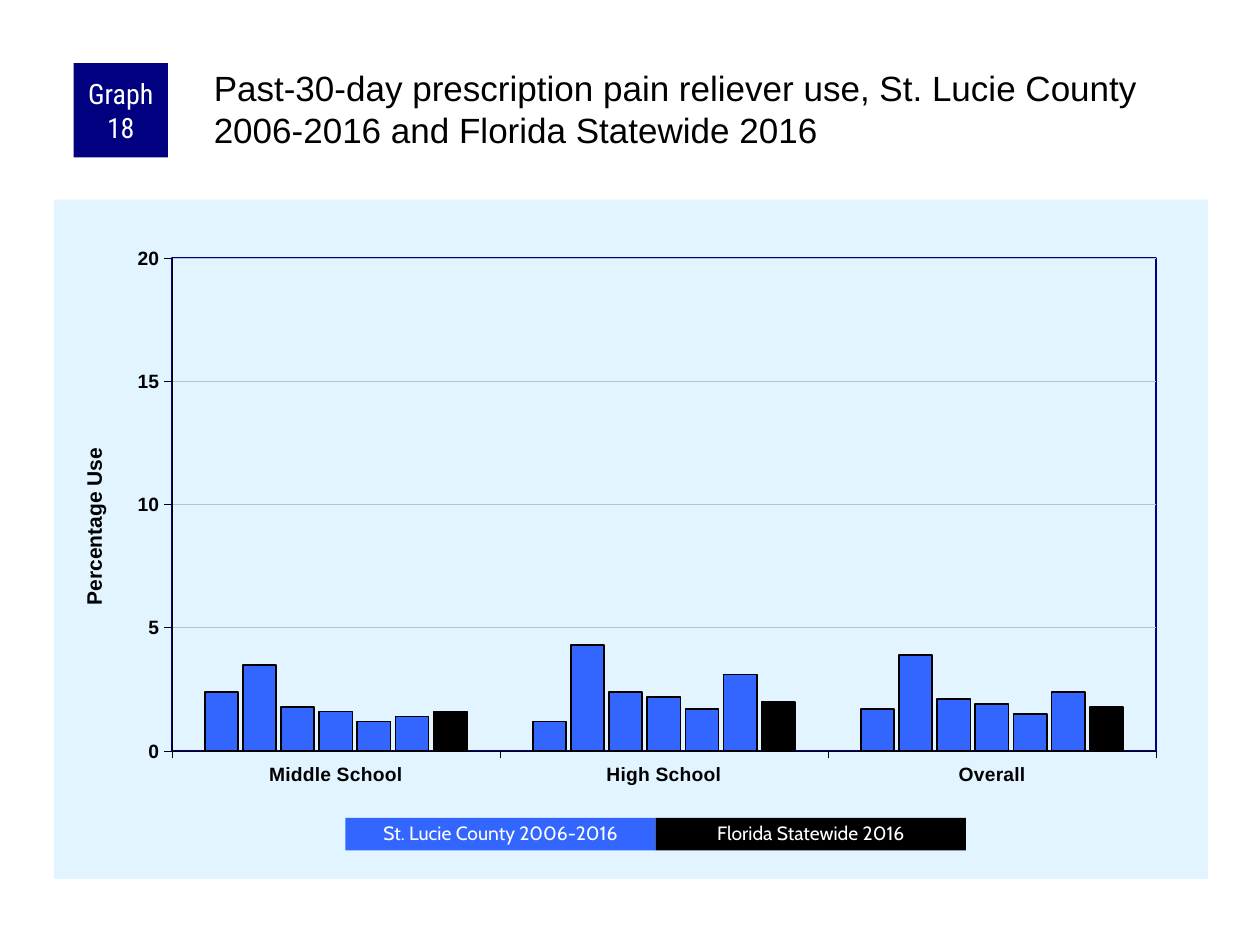
from lxml.etree import SubElement, fromstring
from pptx import Presentation
from pptx.chart.data import CategoryChartData
from pptx.dml.color import RGBColor
from pptx.enum.chart import XL_CHART_TYPE as Chart, XL_TICK_MARK as Tick
from pptx.enum.shapes import MSO_SHAPE as Shape
from pptx.enum.text import MSO_ANCHOR as Anchor, MSO_AUTO_SIZE as AutoSize, PP_ALIGN as Align
from pptx.oxml.ns import nsdecls, qn
from pptx.util import Inches, Pt

COLS, ROWS = 120, 90
COLORS = {"black": "000000", "white": "FFFFFF", "navy": "000080",
          "blue": "3366FF", "pale": "E1F4FF", "grid": "C0C0C0"}
LEVELS = ["Middle School", "High School", "Overall"]
COUNTY = [(2.4, 1.2, 1.7), (3.5, 4.3, 3.9), (1.8, 2.4, 2.1),
          (1.6, 2.2, 1.9), (1.2, 1.7, 1.5), (1.4, 3.1, 2.4)]
STATE = (1.6, 2, 1.8)


def rgb(name):
    return RGBColor.from_string(COLORS[name])


def format_font(font, size, color="black", name="Arial", bold=False):
    font.size, font.name, font.bold = Pt(size), name, bold
    font.color.rgb = rgb(color)


def write(tf, text, align=Align.LEFT, anchor=Anchor.TOP, spacing=None,
          insets=(0.1, 0.05, 0.1, 0.05), **font):
    tf.word_wrap, tf.auto_size = True, AutoSize.NONE
    tf.vertical_anchor = anchor
    tf.margin_left, tf.margin_top, tf.margin_right, tf.margin_bottom = map(Inches, insets)
    p = tf.paragraphs[0]
    p.alignment, p.line_spacing = align, spacing
    r = p.add_run()
    r.text = text
    format_font(r.font, **font)


def set_line(line, color, width):
    line.color.rgb, line.width = rgb(color), Pt(width)


def set_layout(parent, index, **values):
    """Give a chart part a manual layout, in shares of the chart's size."""
    for old in parent.findall(qn("c:layout")):
        parent.remove(old)
    layout = fromstring(f"<c:layout {nsdecls('c')}><c:manualLayout/></c:layout>")
    for tag, value in values.items():
        SubElement(layout[0], qn(f"c:{tag}")).set("val", str(value))
    parent.insert(index, layout)


def area_format(inner):
    return fromstring(f"<c:spPr {nsdecls('c', 'a')}>{inner}</c:spPr>")


def solid(color):
    return f'<a:solidFill><a:srgbClr val="{COLORS[color]}"/></a:solidFill>'


class GraphSlide:
    """Slide laid out on a grid of COLS by ROWS cells."""

    def __init__(self, prs):
        self.cell_w, self.cell_h = prs.slide_width / COLS, prs.slide_height / ROWS
        self.s = prs.slides.add_slide(prs.slide_layouts[5])

    def box(self, x, y, w, h):
        return (round(x * self.cell_w), round(y * self.cell_h),
                round(w * self.cell_w), round(h * self.cell_h))

    def title(self, text, box):
        sp = self.s.shapes.title
        sp.left, sp.top, sp.width, sp.height = self.box(*box)
        write(sp.text_frame, text, size=20, insets=(0.03, 0.03, 0, 0))

    def label(self, text, box, fill, **style):
        sp = self.s.shapes.add_shape(Shape.RECTANGLE, *self.box(*box))
        sp.shadow.inherit = False
        sp.fill.solid()
        sp.fill.fore_color.rgb = rgb(fill)
        sp.line.fill.background()
        write(sp.text_frame, text, align=Align.CENTER, anchor=Anchor.MIDDLE,
              color="white", **style)

    def chart(self, box, categories, series):
        """series holds (values, colour) pairs."""
        data = CategoryChartData(number_format="General")
        data.categories = categories
        for number, (values, _) in enumerate(series, 1):
            data.add_series(f"Series {number}", values)
        chart = self.s.shapes.add_chart(Chart.COLUMN_CLUSTERED, *self.box(*box), data).chart
        chart.has_legend = chart.has_title = False
        format_font(chart.font, 8)
        plot = chart.plots[0]
        plot.gap_width, plot.overlap, plot.vary_by_categories = 200, -15, False
        for ser, (_, color) in zip(plot.series, series):
            ser.format.fill.solid()
            ser.format.fill.fore_color.rgb = rgb(color)
            set_line(ser.format.line, "black", 1)
        self.axes(chart)
        self.areas(chart)

    def axes(self, chart):
        for axis in (chart.category_axis, chart.value_axis):
            axis.major_tick_mark, axis.minor_tick_mark = Tick.OUTSIDE, Tick.NONE
            format_font(axis.tick_labels.font, 11, bold=True)
            set_line(axis.format.line, "black", 0.25)
        axis = chart.value_axis
        axis.minimum_scale, axis.maximum_scale, axis.major_unit = 0, 20, 5
        axis.has_major_gridlines = True
        set_line(axis.major_gridlines.format.line, "grid", 0.25)
        title = axis.axis_title
        r = title.text_frame.paragraphs[0].add_run()
        r.text = "Percentage Use"
        format_font(r.font, 12, bold=True)
        set_layout(title._element, 1, xMode="edge", yMode="edge", x=0.02, y=0.36)

    def areas(self, chart):
        root = chart._chartSpace
        root.find(qn("c:chart")).addnext(
            area_format(solid("pale") + "<a:ln><a:noFill/></a:ln>"))
        plot_area = root.find(qn("c:chart")).find(qn("c:plotArea"))
        set_layout(plot_area, 0, layoutTarget="inner", xMode="edge", yMode="edge",
                   x=0.102, y=0.086, w=0.853, h=0.726)
        plot_area.append(area_format(
            f'<a:noFill/><a:ln w="{Pt(1)}">{solid("navy")}</a:ln>'))


def main():
    prs = Presentation()
    prs.slide_width, prs.slide_height = Inches(10), Inches(7.5)
    slide = GraphSlide(prs)
    slide.title("Past-30-day prescription pain reliever use, St. Lucie County "
                "2006-2016 and Florida Statewide 2016", (20, 6, 95, 10))
    slide.chart((5.15, 19, 109.9, 64.7), LEVELS,
                [(values, "blue") for values in COUNTY] + [(STATE, "black")])
    slide.label("Graph 18", (7, 6, 9, 9), "navy", size=16,
                name="Roboto Condensed", insets=(0.05, 0, 0.05, 0))
    legend = [("St. Lucie County 2006-2016", "blue"), ("Florida Statewide 2016", "black")]
    width = 29.55
    for i, (text, color) in enumerate(legend):
        slide.label(text, (32.9 + i * width, 77.9, width, 3.1), color,
                    size=11, name="Cabin", spacing=0.9)
    prs.save("out.pptx")


if __name__ == "__main__":
    main()
